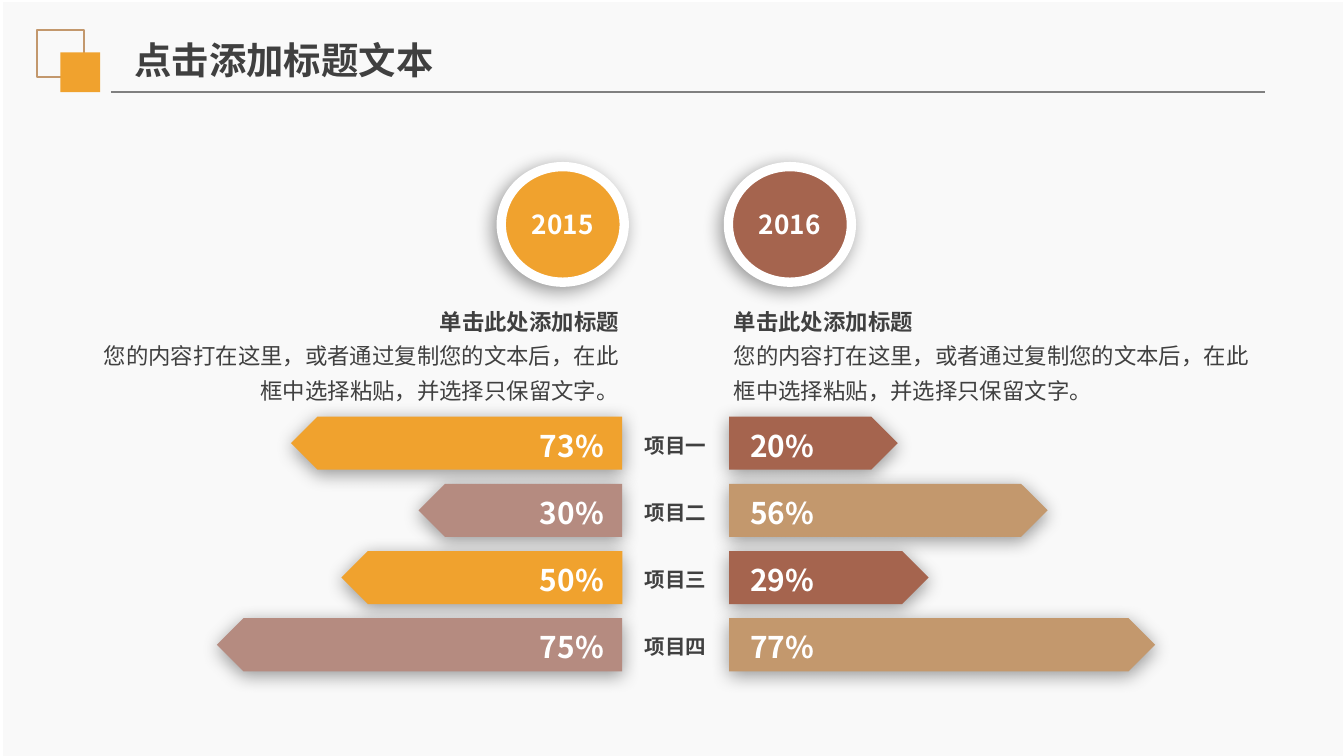
"""Build a slide that compares four items across two years."""
from dataclasses import dataclass

from lxml.etree import SubElement
from pptx import Presentation
from pptx.dml.color import RGBColor
from pptx.enum.shapes import MSO_CONNECTOR, MSO_SHAPE
from pptx.enum.text import MSO_ANCHOR, MSO_AUTO_SIZE, PP_ALIGN
from pptx.oxml.ns import qn
from pptx.util import Emu, Pt

PX = 4572
FONT = "Noto Sans CJK SC"
WHITE = RGBColor(0xFF, 0xFF, 0xFF)
PAPER = RGBColor(0xF3, 0xF3, 0xF3)
GRAY = RGBColor(0x80, 0x80, 0x80)
INK = RGBColor(0x40, 0x40, 0x40)
ORANGE = RGBColor(0xF0, 0xA2, 0x2E)
ROSE = RGBColor(0xB5, 0x8B, 0x80)
BROWN = RGBColor(0xA5, 0x64, 0x4E)
TAN = RGBColor(0xC3, 0x98, 0x6D)
MARGINS = (14, 7, 14, 7)
ROW_TOP, ROW_STEP, BAR_HEIGHT = 620, 100, 79
ITEMS = ("项目一", "项目二", "项目三", "项目四")
HEADING = "单击此处添加标题"
BODY = "您的内容打在这里，或者通过复制您的文本后，在此框中选择粘贴，并选择只保留文字。"


@dataclass(frozen=True)
class Bar:
    value: str
    width: int


@dataclass(frozen=True)
class Side:
    year: str
    edge: int
    flipped: bool
    colors: tuple[RGBColor, RGBColor]
    bars: tuple[Bar, ...]
    value_left: int
    circle_left: int
    text_left: int
    text_width: int
    align: PP_ALIGN


SIDES = (
    Side("2016", 1085, False, (BROWN, TAN),
         (Bar("20%", 251), Bar("56%", 474), Bar("29%", 297), Bar("77%", 634)),
         1100, 1084, 1084, 812, PP_ALIGN.LEFT),
    Side("2015", 926, True, (ORANGE, ROSE),
         (Bar("73%", 493), Bar("30%", 303), Bar("50%", 418), Bar("75%", 603)),
         787, 746, 134, 795, PP_ALIGN.RIGHT),
)


def px(*lengths: int) -> list[Emu]:
    """Turn pixel lengths into EMU."""
    return [Emu(length * PX) for length in lengths]


def add_figure(page, kind, place: tuple, fill=None, line=None, weight=1):
    """Add a preset shape without a shadow."""
    figure = page.shapes.add_shape(kind, *px(*place))
    figure.shadow.inherit = False
    if fill is None:
        figure.fill.background()
    else:
        figure.fill.solid()
        figure.fill.fore_color.rgb = fill
    if line is None:
        figure.line.fill.background()
    else:
        figure.line.color.rgb = line
        figure.line.width = Pt(weight)
    return figure


def add_shadow(figure, distance: int, angle: int) -> None:
    """Give a shape a soft black shadow."""
    effects = figure._element.spPr.find(qn("a:effectLst"))
    shadow = SubElement(effects, qn("a:outerShdw"), blurRad=str(Pt(10)),
                        dist=str(Pt(distance)), dir=str(angle * 60000),
                        algn="ctr", rotWithShape="0")
    color = SubElement(shadow, qn("a:srgbClr"), val="000000")
    SubElement(color, qn("a:alpha"), val="40000")


def write(box, lines: tuple[str, ...], size: int, color: RGBColor, align: PP_ALIGN,
          margins=MARGINS, wrap=False, anchor=MSO_ANCHOR.TOP,
          autosize=MSO_AUTO_SIZE.SHAPE_TO_FIT_TEXT, spacing=None) -> None:
    """Fill a box with paragraphs, the first of them bold."""
    frame = box.text_frame
    left, top, right, bottom = px(*margins)
    frame_format = {"margin_left": left, "margin_top": top, "margin_right": right,
                    "margin_bottom": bottom, "word_wrap": wrap,
                    "vertical_anchor": anchor, "auto_size": autosize}
    for name, value in frame_format.items():
        setattr(frame, name, value)
    for index, line in enumerate(lines):
        para = frame.add_paragraph() if index else frame.paragraphs[0]
        para.alignment = align
        if spacing:
            para.line_spacing = spacing
        span = para.add_run()
        span.text = line
        span.font.color.rgb = color
        font_format = {"name": FONT, "size": Pt(size), "bold": index == 0}
        for name, value in font_format.items():
            setattr(span.font, name, value)
        SubElement(span.font._element, qn("a:ea"), typeface=FONT)


def add_text(page, place: tuple, *args, **options) -> None:
    """Add a text box and write into it."""
    write(page.shapes.add_textbox(*px(*place)), *args, **options)


def draw_frame(page) -> None:
    """Draw the backdrop, the header rule and the two squares."""
    page.background.fill.solid()
    page.background.fill.fore_color.rgb = PAPER
    panel = add_figure(page, MSO_SHAPE.RECTANGLE, (2, 0, 2000, 1130), WHITE, WHITE, 2)
    color = panel._element.spPr.find(qn("a:solidFill")).find(qn("a:srgbClr"))
    SubElement(color, qn("a:alpha"), val="58000")
    rule = page.shapes.add_connector(MSO_CONNECTOR.STRAIGHT, *px(165, 137, 1882, 137))
    rule.line.color.rgb = GRAY
    rule.line.width = Pt(0.75)
    SubElement(rule._element.spPr, qn("a:effectLst"))
    add_figure(page, MSO_SHAPE.RECTANGLE, (55, 45, 70, 70), line=TAN)
    add_figure(page, MSO_SHAPE.RECTANGLE, (90, 78, 59, 59), ORANGE)


def draw_title(page) -> None:
    """Place the title above the backdrop."""
    title = page.shapes.title
    page.shapes._spTree.append(title._element)
    title.left, title.top, title.width, title.height = px(180, 45, 490, 87)
    write(title, ("点击添加标题文本",), 20, INK, PP_ALIGN.LEFT, (20, 10, 20, 10))


def draw_side(page, side: Side) -> None:
    """Draw the bars, year circle and description of one year."""
    for row, bar in enumerate(side.bars):
        top = ROW_TOP + row * ROW_STEP
        left = side.edge - bar.width if side.flipped else side.edge
        arrow = add_figure(page, MSO_SHAPE.PENTAGON, (left, top, bar.width, BAR_HEIGHT),
                           side.colors[row % 2])
        add_shadow(arrow, 2, 90)
        if side.flipped:
            arrow._element.spPr.find(qn("a:xfrm")).set("flipH", "1")
        add_text(page, (side.value_left, top + 9, 128, 70), (bar.value,), 16, WHITE,
                 PP_ALIGN.CENTER)
    circle = add_figure(page, MSO_SHAPE.OVAL, (side.circle_left, 248, 183, 172),
                        side.colors[0], WHITE, 5)
    add_shadow(circle, 3, 135)
    write(circle, (side.year,), 14, WHITE, PP_ALIGN.CENTER, wrap=True,
          anchor=MSO_ANCHOR.MIDDLE, autosize=MSO_AUTO_SIZE.NONE)
    add_text(page, (side.text_left, 442, side.text_width, 166), (HEADING, BODY), 12, INK,
             side.align, margins=(8, 4, 8, 4), wrap=True, spacing=1.3)


def main() -> None:
    """Build and save the deck."""
    deck = Presentation()
    deck.slide_width, deck.slide_height = px(2000, 1125)
    page = deck.slides.add_slide(deck.slide_layouts[5])
    draw_frame(page)
    for side in SIDES:
        draw_side(page, side)
    for row, item in enumerate(ITEMS):
        add_text(page, (943, ROW_TOP + 17 + row * ROW_STEP, 124, 54), (item,), 11, INK,
                 PP_ALIGN.CENTER)
    draw_title(page)
    deck.save("out.pptx")


if __name__ == "__main__":
    main()
